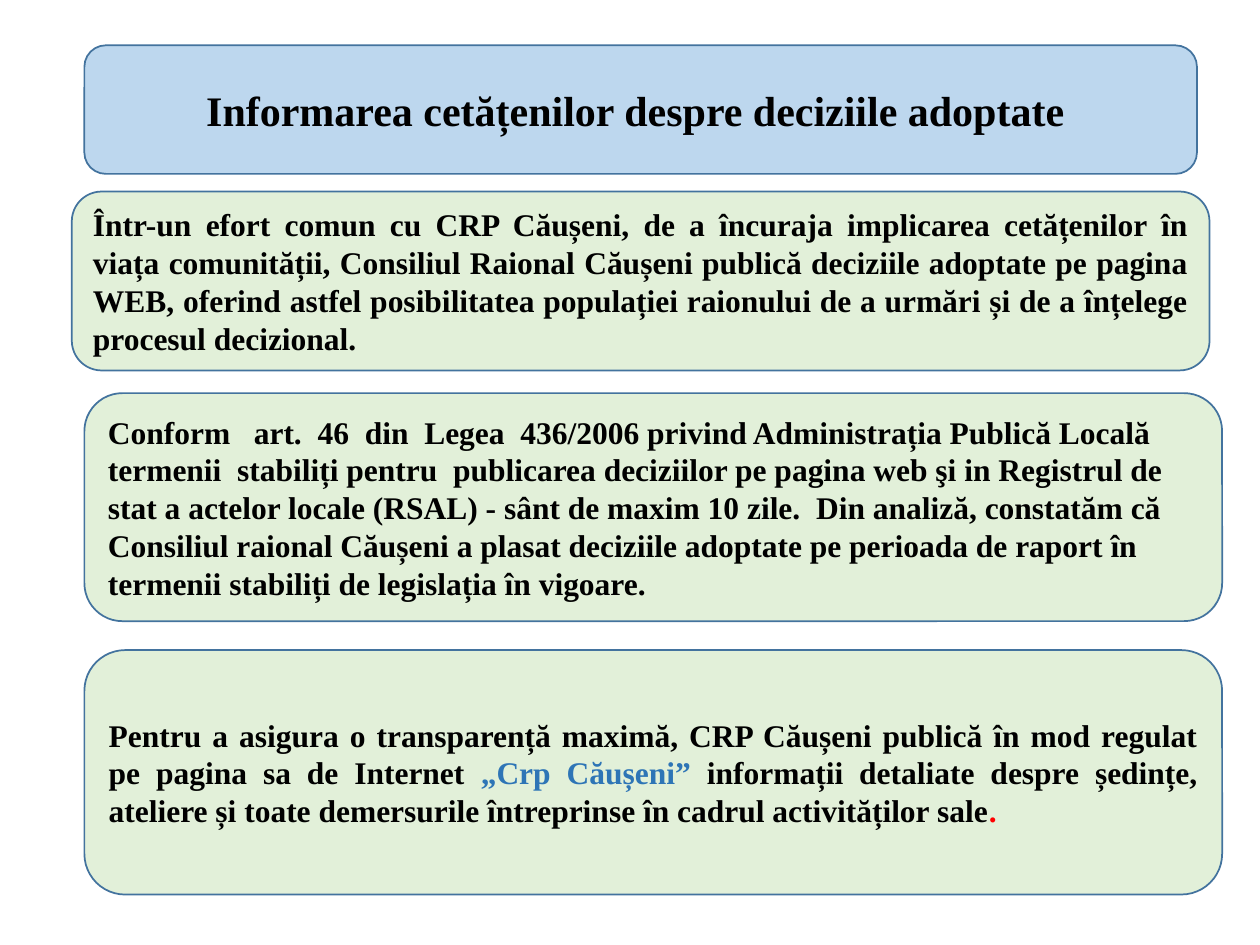
import pptx
import pptx.dml.color
import pptx.enum.shapes
import pptx.enum.text
import pptx.util
from pptx.util import Inches

ALIGN = pptx.enum.text.PP_ALIGN

THEME = {
    "font": "Times New Roman",
    "title_size": 24,
    "body_size": 18,
    "title_fill": "BDD7EE",
    "body_fill": "E2F0D9",
    "line": "43739E",
    "text": "000000",
    "link": "2E75B6",
    "accent": "FF0000",
}

# Each panel: box (left, top, width, height), role, alignment, runs of (text, colour)
PANELS = [
    ((0.67, 0.36, 8.83, 1.02), "title", ALIGN.CENTER, [
        ("Informarea cetățenilor despre deciziile adoptate ", "text"),
    ]),
    ((0.57, 1.52, 9.03, 1.42), "body", ALIGN.JUSTIFY, [
        ("Într-un efort comun cu CRP Căușeni, de a încuraja implicarea cetățenilor în "
         "viața comunității, Consiliul Raional Căușeni publică deciziile adoptate pe pagina "
         "WEB, oferind astfel posibilitatea populației raionului de a urmări și de a înțelege "
         "procesul decizional.", "text"),
    ]),
    ((0.67, 3.12, 9.03, 1.81), "body", ALIGN.LEFT, [
        ("Conform   art.  46  din  Legea  436/2006 privind Administrația Publică Locală "
         "termenii  stabiliți pentru  publicarea deciziilor pe pagina web şi in Registrul de "
         "stat a actelor locale (RSAL) - sânt de maxim 10 zile.  Din analiză, constatăm că "
         "Consiliul raional Căușeni a plasat deciziile adoptate pe perioada de raport în "
         "termenii stabiliți de legislația în vigoare.", "text"),
    ]),
    ((0.67, 5.16, 9.03, 1.94), "body", ALIGN.JUSTIFY, [
        ("Pentru a asigura o transparență maximă, CRP Căușeni publică în mod regulat "
         "pe pagina sa de Internet ", "text"),
        ("„Crp Căușeni” ", "link"),
        ("informații detaliate despre ședințe, ateliere și toate demersurile întreprinse "
         "în cadrul activităților sale", "text"),
        (".", "accent"),
    ]),
]


def theme_color(name):
    return pptx.dml.color.RGBColor.from_string(THEME[name])


def add_panel(slide, box, role, alignment, runs):
    shape = slide.shapes.add_shape(
        pptx.enum.shapes.MSO_SHAPE.ROUNDED_RECTANGLE, *map(Inches, box))
    shape.shadow.inherit = False
    shape.fill.solid()
    shape.fill.fore_color.rgb = theme_color(f"{role}_fill")
    shape.line.color.rgb = theme_color("line")
    shape.line.width = pptx.util.Pt(1)

    text_frame = shape.text_frame
    text_frame.word_wrap = True
    text_frame.vertical_anchor = pptx.enum.text.MSO_ANCHOR.MIDDLE
    paragraph = text_frame.paragraphs[0]
    paragraph.alignment = alignment
    for text, color in runs:
        run = paragraph.add_run()
        run.text = text
        run.font.name = THEME["font"]
        run.font.size = pptx.util.Pt(THEME[f"{role}_size"])
        run.font.bold = True
        run.font.color.rgb = theme_color(color)


def main():
    presentation = pptx.Presentation()
    presentation.slide_width = Inches(10)
    presentation.slide_height = Inches(7.5)
    slide = presentation.slides.add_slide(presentation.slide_layouts[6])
    for panel in PANELS:
        add_panel(slide, *panel)
    presentation.save("out.pptx")


if __name__ == "__main__":
    main()
